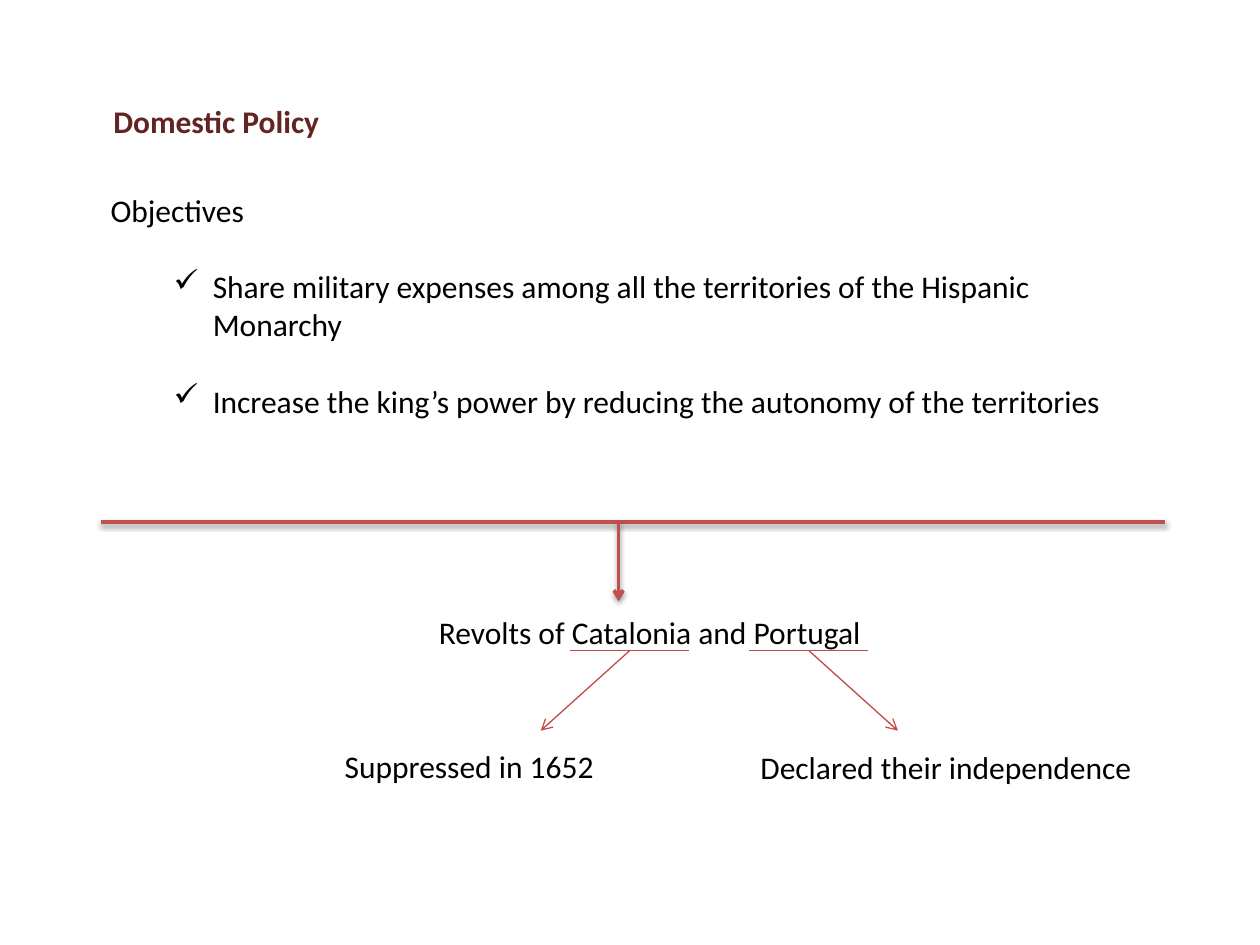
import lxml.etree
import pptx
import pptx.dml.color
import pptx.enum.shapes
import pptx.enum.text
import pptx.oxml.ns
import pptx.util
from dataclasses import dataclass

Cm = pptx.util.Cm
Pt = pptx.util.Pt
qn = pptx.oxml.ns.qn
Anchor = pptx.enum.text.MSO_ANCHOR
Align = pptx.enum.text.PP_ALIGN


@dataclass(frozen=True)
class Theme:
    font: str = "Calibri"
    size: int = 18
    gap: int = 22
    head: str = "632523"
    ink: str = "000000"
    bold_line: str = "C0504D"
    thin_line: str = "BF4C48"
    thick: float = 2
    thin: float = 0.75


THEME = Theme()


def color(code):
    return pptx.dml.color.RGBColor.from_string(code)


def assign(item, values):
    for name, value in values.items():
        setattr(item, name, value)


def node(parent, tag, **values):
    return lxml.etree.SubElement(parent, qn(tag), values)


def place(shape, box):
    names = ("left", "top", "width", "height")
    assign(shape, {name: Cm(size) for name, size in zip(names, box)})
    assign(shape.text_frame, {
        "word_wrap": True,
        "auto_size": pptx.enum.text.MSO_AUTO_SIZE.NONE,
        "vertical_anchor": Anchor.TOP,
    })


def write(para, text, code=THEME.ink, bold=False, **form):
    assign(para, {"alignment": Align.LEFT, **form})
    run = para.add_run()
    run.text = text
    assign(run.font, {"name": THEME.font, "size": Pt(THEME.size), "bold": bold})
    run.font.color.rgb = color(code)


def add_text(slide, box, text, **form):
    shape = slide.shapes.add_textbox(0, 0, 0, 0)
    place(shape, box)
    write(shape.text_frame.paragraphs[0], text, **form)
    return shape


def add_line(slide, start, end, code, width, arrow=False, shade=False):
    kind = pptx.enum.shapes.MSO_CONNECTOR.STRAIGHT
    line = slide.shapes.add_connector(kind, *map(Cm, (*start, *end)))
    line.line.color.rgb = color(code)
    line.line.width = Pt(width)
    if arrow:
        node(line.line._get_or_add_ln(), "a:tailEnd", type="arrow")
    effect = node(line._element.spPr, "a:effectLst")
    if shade:
        cast = node(effect, "a:outerShdw", blurRad=str(Pt(3.1)),
                    dist=str(Pt(1.6)), dir="5400000", rotWithShape="0")
        tint = node(cast, "a:srgbClr", val="000000")
        node(tint, "a:alpha", val="38000")


def add_title(slide, box):
    title = slide.shapes.title
    place(title, box)
    write(title.text_frame.paragraphs[0], "Domestic Policy", THEME.head, True)


def add_goals(slide, box):
    frame = add_text(slide, box, "Objectives").text_frame
    goals = (
        "Share military expenses among all the territories of the Hispanic Monarchy",
        "Increase the king’s power by reducing the autonomy of the territories",
    )
    for goal in goals:
        para = frame.add_paragraph()
        props = para._p.get_or_add_pPr()
        assign(para, {"level": 1, "space_before": Pt(THEME.gap)})
        props.set("marL", str(Cm(2.06)))
        props.set("indent", str(Cm(-0.79)))
        node(props, "a:buChar", char="✓")
        write(para, goal)


def add_divide(slide, box):
    left, top, width, height = box
    drop = left + 10.44
    form = {"code": THEME.bold_line, "width": THEME.thick, "shade": True}
    add_line(slide, (left, top), (left + width, top), **form)
    add_line(slide, (drop, top), (drop, top + height), arrow=True, **form)


def add_revolts(slide, box):
    left, top, width, height = box
    add_text(slide, (left + 3.1, top, 16, 1.02),
             "Revolts of Catalonia and Portugal", alignment=Align.CENTER)
    mid, base = left + 12.5, top + 0.87
    form = {"code": THEME.thin_line, "width": THEME.thin}
    for side in (-1, 1):
        name = mid + side * 1.8
        add_line(slide, (name - 1.2, base), (name + 1.2, base), **form)
        add_line(slide, (name, base), (name + side * 1.8, base + 1.62),
                 arrow=True, **form)
    low = top + height - 1.02
    add_text(slide, (left + 4.7, low - 0.03, 7.2, 1.02), "Suppressed in 1652")
    add_text(slide, (left + 13.08, low, 8.42, 1.02), "Declared their independence")


def main():
    deck = pptx.Presentation()
    assign(deck, {"slide_width": Cm(25.4), "slide_height": Cm(19.05)})
    slide = deck.slides.add_slide(deck.slide_layouts[5])
    add_title(slide, (2.03, 1.93, 10.8, 1.02))
    add_goals(slide, (1.98, 3.73, 21, 5.64))
    add_divide(slide, (2.03, 10.52, 21.46, 1.6))
    add_revolts(slide, (2, 12.24, 21.5, 3.74))
    deck.save("out.pptx")


if __name__ == "__main__":
    main()
